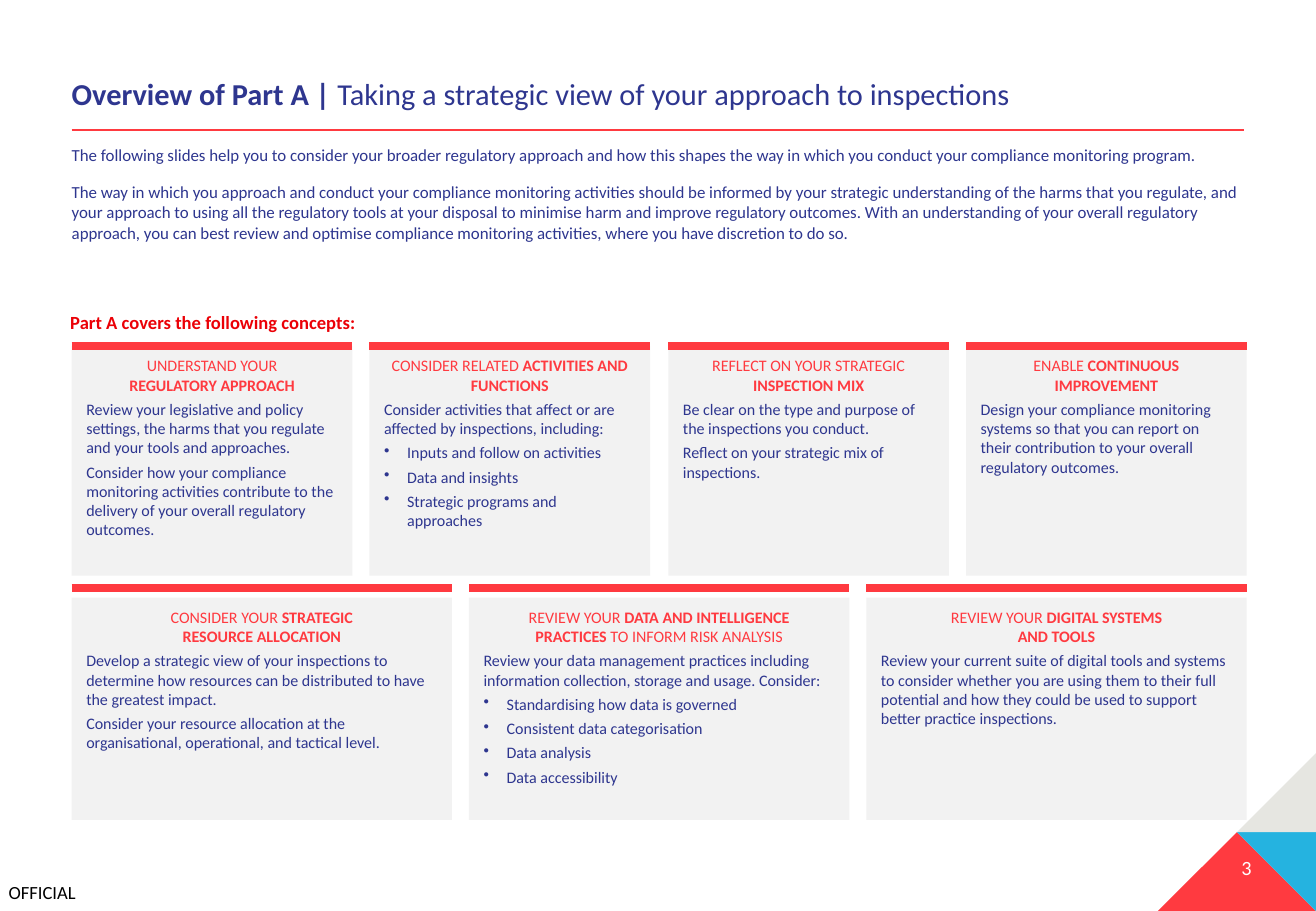
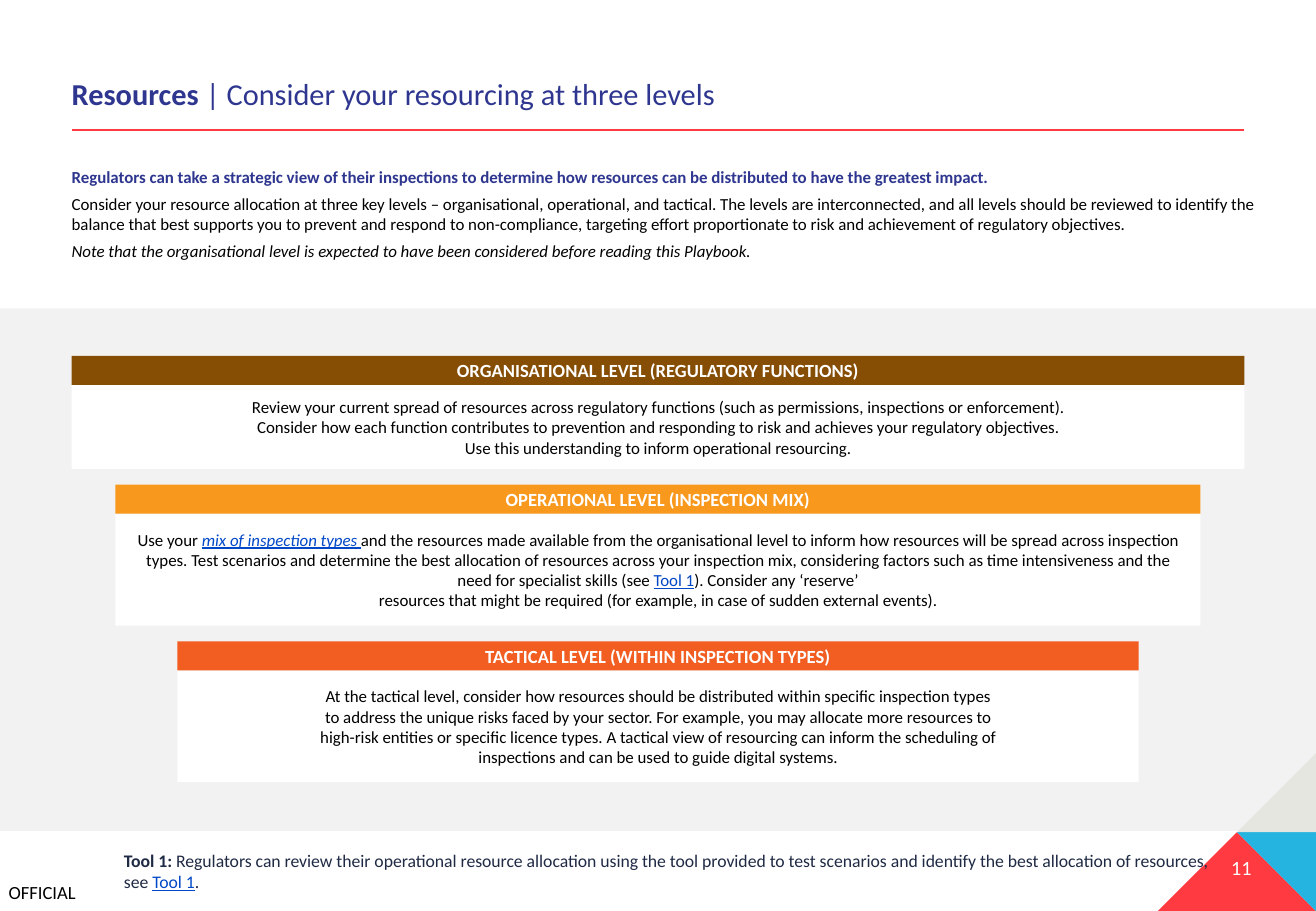
from dataclasses import dataclass

from lxml.etree import SubElement
from pptx import Presentation
from pptx.dml.color import RGBColor
from pptx.enum.shapes import MSO_CONNECTOR as Link, MSO_SHAPE as Form
from pptx.enum.text import MSO_ANCHOR as Anchor, MSO_AUTO_SIZE as Fit, PP_ALIGN as Align
from pptx.oxml.ns import qn
from pptx.util import Pt

PX = 9144
WIDE, HIGH = 1083, 750
LEFT = 59


@dataclass(frozen=True)
class Theme:
    """Colours, font and type sizes of the deck."""
    navy: str = "2E368F"
    red: str = "FF3A40"
    alert: str = "EB0007"
    sky: str = "25B3E0"
    stone: str = "E6E6E1"
    pale: str = "F2F2F2"
    white: str = "FFFFFF"
    black: str = "000000"
    ink: str = "1F2A44"
    blue: str = "0048C7"
    brown: str = "864D04"
    amber: str = "F8981D"
    orange: str = "F25E21"
    font: str = "Calibri"
    title: float = 18
    number: float = 12
    head: float = 11
    tool: float = 10.5
    body: float = 10
    card: float = 9.5


LOOK = Theme()


def px(*units):
    """Turn px lengths into EMU."""
    return [round(unit * PX) for unit in units]


def bold(text):
    """Return a bold run."""
    return text, {"bold": True}


def link(text, **style):
    """Return a run styled as a link."""
    return text, {"color": LOOK.blue, "underline": True, **style}


def frame(shape, ins=(10, 5, 10, 5), anchor=Anchor.TOP):
    """Set up the text frame of a shape and return it."""
    text = shape.text_frame
    text.word_wrap = True
    text.auto_size = Fit.NONE
    text.vertical_anchor = anchor
    (text.margin_left, text.margin_top,
     text.margin_right, text.margin_bottom) = px(*ins)
    return text


def say(text, *runs, size=LOOK.body, color=LOOK.black, align=Align.LEFT,
        after=0, lead=None, bullet=False, **style):
    """Write one paragraph of plain or styled runs into a text frame."""
    para = text.paragraphs[0] if not text.text else text.add_paragraph()
    para.alignment, para.space_after = align, Pt(after)
    if lead:
        para.line_spacing = lead
    if bullet:
        props = para._p.get_or_add_pPr()
        props.set("marL", str(19 * PX))
        props.set("indent", str(-19 * PX))
        SubElement(props, qn("a:buChar"), char="•")
    for item in runs:
        words, extra = item if isinstance(item, tuple) else (item, {})
        form = {"color": color, **style, **extra}
        for row, piece in enumerate(words.split("\n")):
            if row:
                para.add_line_break()
                SubElement(para._p[-1], qn("a:rPr"), sz=str(int(size * 100)))
            if not piece:
                continue
            run = para.add_run()
            run.text = piece
            font = run.font
            font.name, font.size = LOOK.font, Pt(size)
            font.color.rgb = RGBColor.from_string(form["color"])
            font.bold = form.get("bold", False)
            font.italic = form.get("italic", False)
            font.underline = form.get("underline", False)


def paint(shape, fill):
    """Give a shape a flat fill without line or shadow."""
    shape.shadow.inherit = False
    shape.fill.solid()
    shape.fill.fore_color.rgb = RGBColor.from_string(fill)
    shape.line.fill.background()


def box(slide, x, y, w, h, fill=None, **form):
    """Add a text box, or a filled rectangle, and return its text frame."""
    if fill is None:
        return frame(slide.shapes.add_textbox(*px(x, y, w, h)), **form)
    shape = slide.shapes.add_shape(Form.RECTANGLE, *px(x, y, w, h))
    paint(shape, fill)
    return frame(shape, **form)


def rule(slide, x, y, w, weight):
    """Draw a level red line."""
    line = slide.shapes.add_connector(Link.STRAIGHT, *px(x, y, x + w, y))
    line.line.color.rgb = RGBColor.from_string(LOOK.red)
    line.line.width = Pt(weight)
    SubElement(line._element.spPr, qn("a:effectLst"))


def start(deck, lead, rest):
    """Add a slide with its title, rule and marking."""
    slide = deck.slides.add_slide(deck.slide_layouts[5])
    title = slide.shapes.title
    title.left, title.top, title.width, title.height = px(LEFT, 59, 965, 38)
    text = frame(title, ins=(0, 5, 0, 5), anchor=Anchor.BOTTOM)
    say(text, bold(lead), rest, size=LOOK.title, color=LOOK.navy, lead=0.9)
    rule(slide, LEFT, 107, 965, 1.25)
    say(box(slide, 7, 725, 59, 18, ins=(0, 0, 0, 0)), "OFFICIAL", size=LOOK.head)
    return slide


def corner(slide, number, side=65):
    """Draw the corner triangles and the slide number."""
    x, y = WIDE - 2 * side, HIGH - 2 * side
    for fill, spots in (
        (LOOK.red, ((1, 1), (0, 2), (2, 2))),
        (LOOK.sky, ((2, 1), (1, 1), (2, 2))),
        (LOOK.stone, ((2, 0), (1, 1), (2, 1))),
    ):
        first, *others = [(x + side * a, y + side * b) for a, b in spots]
        path = slide.shapes.build_freeform(*first, scale=PX)
        path.add_line_segments(others)
        paint(path.convert_to_shape(), fill)
    text = box(slide, x - 10, y + 79, 87, 30, ins=(0, 5, 0, 5))
    say(text, number, size=LOOK.number, color=LOOK.white, align=Align.RIGHT)


def cards(slide, x, y, w, h, items, drop=0, gap=14):
    """Lay out a row of equal cards, each under a red bar."""
    step = (w + gap) / len(items)
    for col, (head, lines, points) in enumerate(items):
        left = round(x + col * step)
        wide = round(step - gap)
        text = box(slide, left, y + drop, wide, h, LOOK.pale, ins=(12, 8, 12, 5))
        form = {"size": LOOK.card, "after": 3}
        say(text, *head, color=LOOK.red, align=Align.CENTER, **form)
        for line in lines:
            say(text, line, color=LOOK.navy, **form)
        for point in points:
            say(text, point, color=LOOK.navy, bullet=True, **form)
        rule(slide, left, y, wide, 4.5)


def level(slide, x, y, w, h, fill, head, runs, bar=24):
    """Draw one level: a coloured bar over a white panel."""
    body = box(slide, x, y + bar, w, h - bar, LOOK.white,
               ins=(16, 5, 16, 5), anchor=Anchor.MIDDLE)
    say(body, *runs, align=Align.CENTER)
    text = box(slide, x, y, w, bar, fill, anchor=Anchor.MIDDLE)
    say(text, bold(head), size=LOOK.head, color=LOOK.white, align=Align.CENTER)


TOP = (
    (("UNDERSTAND YOUR\n", bold("REGULATORY APPROACH")),
     ("Review your legislative and policy settings, the harms that you regulate and your tools and approaches.",
      "Consider how your compliance monitoring activities contribute to the delivery of your overall regulatory outcomes."),
     ()),
    (("CONSIDER RELATED ", bold("ACTIVITIES AND FUNCTIONS")),
     ("Consider activities that affect or are affected by inspections, including:",),
     ("Inputs and follow on activities", "Data and insights", "Strategic programs and approaches")),
    (("REFLECT ON YOUR STRATEGIC\n", bold("INSPECTION MIX")),
     ("Be clear on the type and purpose of the inspections you conduct.",
      "Reflect on your strategic mix of inspections."),
     ()),
    (("ENABLE ", bold("CONTINUOUS IMPROVEMENT")),
     ("Design your compliance monitoring systems so that you can report on their contribution to your overall regulatory outcomes.",),
     ()),
)

LOW = (
    (("CONSIDER YOUR ", bold("STRATEGIC\nRESOURCE ALLOCATION")),
     ("Develop a strategic view of your inspections to determine how resources can be distributed to have the greatest impact.",
      "Consider your resource allocation at the organisational, operational, and tactical level."),
     ()),
    (("REVIEW YOUR ", bold("DATA AND INTELLIGENCE\nPRACTICES "), "TO INFORM RISK ANALYSIS"),
     ("Review your data management practices including information collection, storage and usage. Consider:",),
     ("Standardising how data is governed", "Consistent data categorisation", "Data analysis", "Data accessibility")),
    (("REVIEW YOUR ", bold("DIGITAL SYSTEMS\nAND TOOLS")),
     ("Review your current suite of digital tools and systems to consider whether you are using them to their full potential and how they could be used to support better practice inspections.",),
     ()),
)

LEVELS = (
    (59, 93, LOOK.brown, "ORGANISATIONAL LEVEL (REGULATORY FUNCTIONS)",
     ("Review your current spread of resources across regulatory functions (such as permissions, inspections or enforcement).\n"
      "Consider how each function contributes to prevention and responding to risk and achieves your regulatory objectives.\n"
      "Use this understanding to inform operational resourcing.",)),
    (95, 116, LOOK.amber, "OPERATIONAL LEVEL (INSPECTION MIX)",
     ("Use your ", link("mix of inspection types ", italic=True),
      "and the resources made available from the organisational level to inform how resources will be spread across "
      "inspection types. Test scenarios and determine the best allocation of resources across your inspection mix, "
      "considering factors such as time intensiveness and the need for specialist skills (see ",
      link("Tool 1"),
      "). Consider any ‘reserve’\nresources that might be required (for example, in case of sudden external events).")),
    (146, 116, LOOK.orange, "TACTICAL LEVEL (WITHIN INSPECTION TYPES)",
     ("At the tactical level, consider how resources should be distributed within specific inspection types\n"
      "to address the unique risks faced by your sector. For example, you may allocate more resources to\n"
      "high-risk entities or specific licence types. A tactical view of resourcing can inform the scheduling of\n"
      "inspections and can be used to guide digital systems.",)),
)


def survey(deck):
    """Build the overview slide."""
    slide = start(deck, "Overview of Part A | ",
                  "Taking a strategic view of your approach to inspections")
    corner(slide, "3")
    text = box(slide, LEFT, 114, 965, 120, ins=(0, 5, 0, 5))
    for line in (
        "The following slides help you to consider your broader regulatory approach and how this shapes the way in "
        "which you conduct your compliance monitoring program.",
        "The way in which you approach and conduct your compliance monitoring activities should be informed by your "
        "strategic understanding of the harms that you regulate, and your approach to using all the regulatory tools "
        "at your disposal to minimise harm and improve regulatory outcomes. With an understanding of your overall "
        "regulatory approach, you can best review and optimise compliance monitoring activities, where you have "
        "discretion to do so.",
    ):
        say(text, line, color=LOOK.navy, after=10)
    cards(slide, LEFT, 285, 967, 189, TOP)
    cards(slide, LEFT, 484, 967, 183, LOW, drop=8)
    say(box(slide, 48, 251, 543, 29), bold("Part A covers the following concepts:"),
        size=LOOK.head, color=LOOK.alert)


def supply(deck):
    """Build the resources slide."""
    slide = start(deck, "Resources ", "| Consider your resourcing at three levels")
    box(slide, 0, 254, WIDE, 430, LOOK.pale)
    text = box(slide, LEFT, 132, 973, 106, ins=(0, 5, 0, 5))
    say(text, bold("Regulators can take a strategic view of their inspections to determine how resources can be "
                   "distributed to have the greatest impact."), color=LOOK.navy, after=4)
    say(text, "Consider your resource allocation at three key levels – organisational, operational, and tactical. "
              "The levels are interconnected, and all levels should be reviewed to identify the balance that best "
              "supports you to prevent and respond to non-compliance, targeting effort proportionate to risk and "
              "achievement of regulatory objectives.", after=4)
    say(text, "Note that the organisational level is expected to have been considered before reading this Playbook.",
        after=4, italic=True)
    y = 293
    for x, h, fill, head, runs in LEVELS:
        level(slide, x, y, WIDE - 2 * x, h, fill, head, runs)
        y += h + 13
    corner(slide, "11")
    note = box(slide, 0, 684, 1008, 66, ins=(102, 5, 10, 5), anchor=Anchor.MIDDLE)
    say(note, bold("Tool 1: "),
        "Regulators can review their operational resource allocation using the tool provided to test scenarios and "
        "identify the best allocation of resources, see ",
        link("Tool 1"), ".", size=LOOK.tool, color=LOOK.ink)


def main():
    """Build and save the deck."""
    deck = Presentation()
    deck.slide_width, deck.slide_height = px(WIDE, HIGH)
    survey(deck)
    supply(deck)
    deck.save("out.pptx")


if __name__ == "__main__":
    main()
